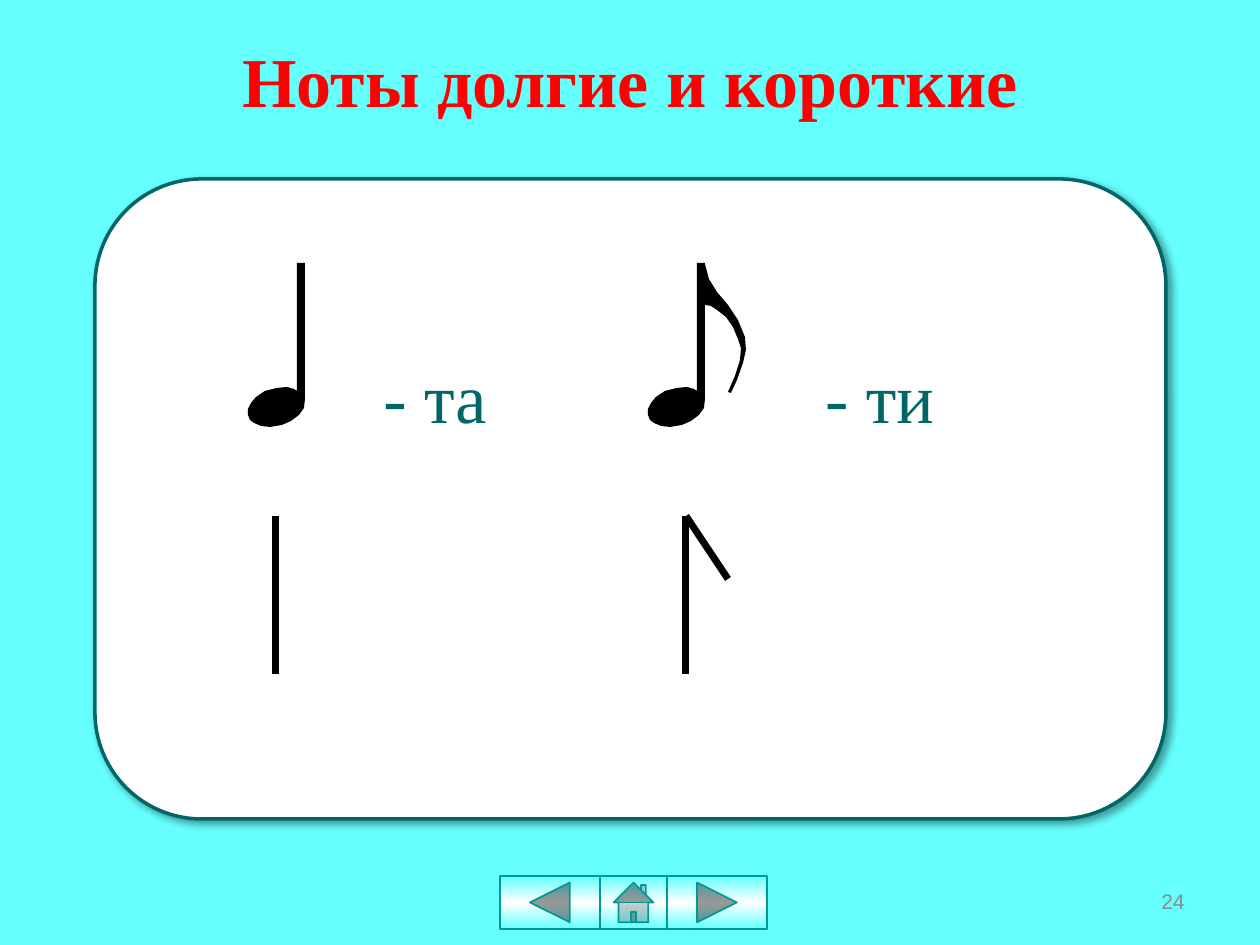
import copy
import lxml.etree
import pptx
import pptx.dml.color
import pptx.enum.shapes
import pptx.enum.text
import pptx.oxml.ns
import pptx.util

SCALE = 914400 / 126
SERIF = "Times New Roman"
CYAN, WHITE, BLACK = "66FFFF", "FFFFFF", "000000"
TEAL, DARK_TEAL, RED, GREY = "009999", "006666", "FF0000", "8C8C8C"

NOTE_HEAD = [
    (57, 136), (56, 145), (51, 152), (43, 158), (34, 162), (22, 164), (13, 163),
    (6, 160), (2, 157), (0, 152), (0, 146), (3, 140), (8, 134), (17, 128),
    (29, 125), (39, 124), (46, 126), (49, 128), (49, 0), (57, 0),
]
NOTE_FLAG = [
    (57, 1), (61, 16), (69, 29), (80, 42), (90, 57), (97, 74), (98, 87),
    (95, 100), (89, 117), (83, 130), (80, 129), (87, 113), (92, 97), (93, 85),
    (90, 76), (85, 64), (78, 54), (69, 47), (63, 43), (57, 42),
]

MSO = pptx.enum.shapes.MSO_SHAPE
ALIGN = pptx.enum.text.PP_ALIGN
ANCHOR = pptx.enum.text.MSO_ANCHOR
AUTO_SIZE = pptx.enum.text.MSO_AUTO_SIZE


def px(length):
    return pptx.util.Emu(round(length * SCALE))


def color(value):
    return pptx.dml.color.RGBColor.from_string(value)


def outline(shape, value, width):
    shape.line.color.rgb = color(value)
    shape.line.width = pptx.util.Pt(width)


def write(frame, text, size, font, value, align, bold=False):
    frame.word_wrap = True
    para = frame.paragraphs[0]
    para.text = text
    para.alignment = align
    para.font.size = pptx.util.Pt(size)
    para.font.name = font
    para.font.bold = bold
    para.font.color.rgb = color(value)


def add_label(page, box, text, size, font, value, align):
    label = page.shapes.add_textbox(*map(px, box))
    write(label.text_frame, text, size, font, value, align)
    return label


def add_title(page, box, text):
    title = page.shapes.title
    title.left, title.top, title.width, title.height = map(px, box)
    frame = title.text_frame
    write(frame, text, 40, SERIF, RED, ALIGN.CENTER, True)
    frame.auto_size = AUTO_SIZE.NONE
    frame.vertical_anchor = ANCHOR.TOP
    frame.margin_top = 0


def add_button(page, box, kind):
    button = page.shapes.add_shape(kind, *map(px, box))
    button.shadow.inherit = False
    button.fill.gradient()
    button.fill.gradient_angle = 90
    stop_list = button._element.spPr.find(".//" + pptx.oxml.ns.qn("a:gsLst"))
    stop_list.insert(1, copy.deepcopy(stop_list[0]))
    for stop, position, value in zip(button.fill.gradient_stops, (0, 0.5, 1), (CYAN, WHITE, CYAN)):
        stop.position = position
        stop.color.rgb = color(value)
    outline(button, TEAL, 1)


def add_navigation(page, left, top):
    for kind, offset, width in (
        (MSO.ACTION_BUTTON_HOME, 100, 67),
        (MSO.ACTION_BUTTON_BACK_OR_PREVIOUS, 0, 100),
        (MSO.ACTION_BUTTON_FORWARD_OR_NEXT, 167, 100),
    ):
        add_button(page, (left + offset, top, width, 53), kind)


def add_panel(page, box):
    panel = page.shapes.add_shape(MSO.ROUNDED_RECTANGLE, *map(px, box))
    panel.shadow.inherit = False
    panel.fill.solid()
    panel.fill.fore_color.rgb = color(WHITE)
    outline(panel, DARK_TEAL, 2)
    qn = pptx.oxml.ns.qn
    effects = panel._element.spPr.find(qn("a:effectLst"))
    shadow = lxml.etree.SubElement(
        effects, qn("a:outerShdw"), blurRad=str(pptx.util.Pt(4)),
        dist=str(pptx.util.Pt(3)), dir="2700000", algn="tl", rotWithShape="0")
    tint = lxml.etree.SubElement(shadow, qn("a:srgbClr"), val=BLACK)
    lxml.etree.SubElement(tint, qn("a:alpha"), val="40000")


def add_note(page, left, top, points):
    builder = page.shapes.build_freeform(*points[0], scale=SCALE)
    builder.add_line_segments(points[1:], close=True)
    note = builder.convert_to_shape(px(left), px(top))
    note.shadow.inherit = False
    note.fill.solid()
    note.fill.fore_color.rgb = color(BLACK)
    note.line.fill.background()


def add_sticks(page, left, top, ends):
    group = page.shapes.add_group_shape()
    for right, down in ends:
        stick = group.shapes.add_connector(
            pptx.enum.shapes.MSO_CONNECTOR.STRAIGHT,
            px(left), px(top), px(left + right), px(top + down))
        outline(stick, BLACK, 4)
        lxml.etree.SubElement(stick._element.spPr, pptx.oxml.ns.qn("a:effectLst"))


def add_syllable(page, box, text):
    label = add_label(page, box, text, 40, SERIF, DARK_TEAL, ALIGN.CENTER)
    label.text_frame.auto_size = AUTO_SIZE.SHAPE_TO_FIT_TEXT


def add_page_number(page, box, text):
    number = add_label(page, box, text, 12, "Arial", GREY, ALIGN.RIGHT)
    number.text_frame.vertical_anchor = ANCHOR.MIDDLE


def main():
    deck = pptx.Presentation()
    deck.slide_width, deck.slide_height = px(1260), px(945)
    page = deck.slides.add_slide(deck.slide_layouts[5])
    page.background.fill.solid()
    page.background.fill.fore_color.rgb = color(CYAN)

    add_title(page, (63, 38, 1134, 158), "Ноты долгие и короткие")
    add_navigation(page, 500, 876)
    add_panel(page, (95, 179, 1071, 640))
    add_note(page, 248, 263, NOTE_HEAD)
    add_syllable(page, (305, 347, 260, 97), "- та")
    add_note(page, 648, 263, NOTE_FLAG + NOTE_HEAD)
    add_syllable(page, (747, 347, 265, 97), "- ти")
    add_sticks(page, 686, 516, [(0, 158), (42, 63)])
    add_sticks(page, 276, 516, [(0, 158)])
    add_page_number(page, (903, 876, 294, 50), "24")
    deck.save("out.pptx")


if __name__ == "__main__":
    main()
